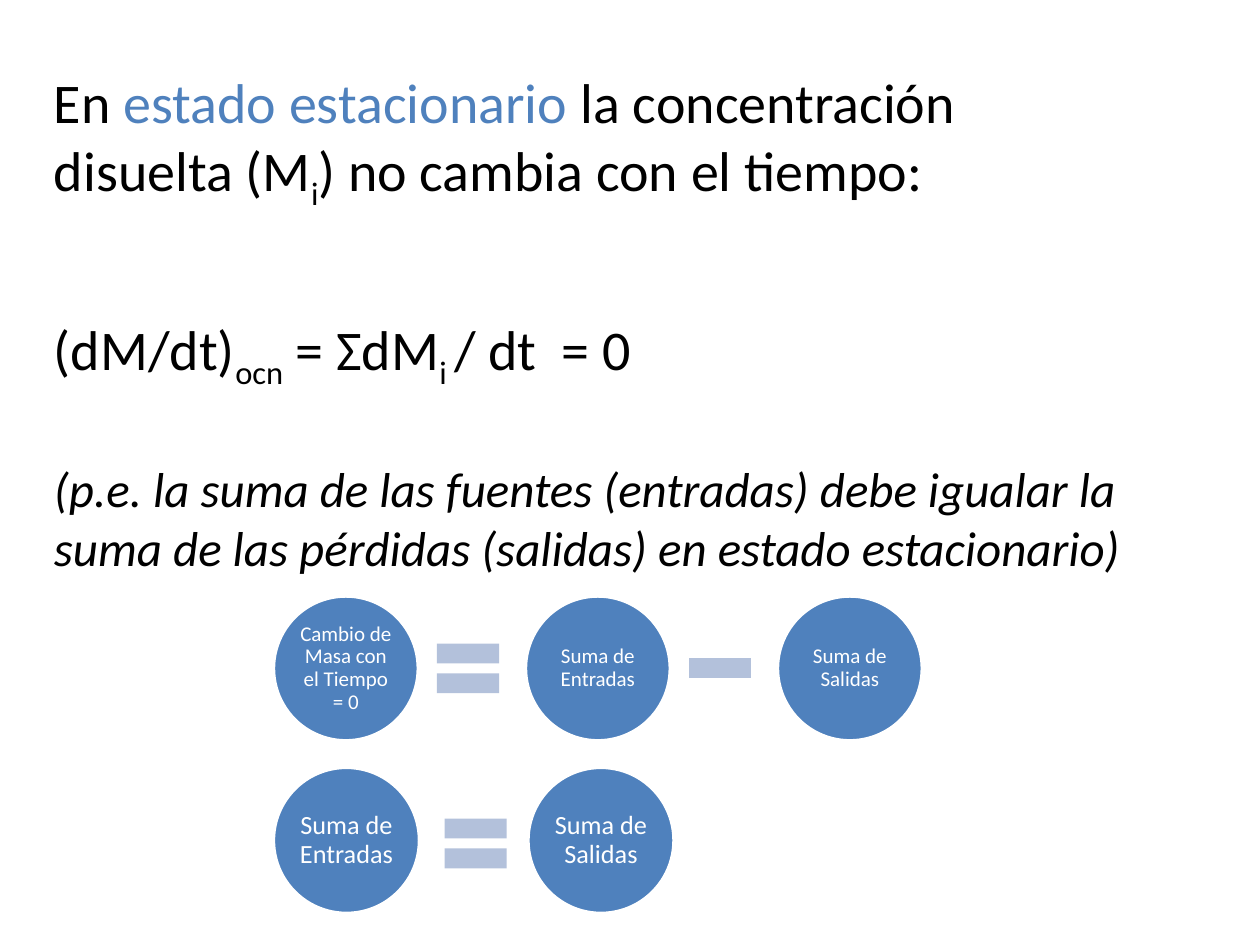
from pptx import Presentation
from pptx.dml.color import RGBColor
from pptx.enum.shapes import MSO_SHAPE as Shape
from pptx.enum.text import MSO_ANCHOR as Anchor, PP_ALIGN as Align
from pptx.util import Inches, Pt

BLACK = RGBColor(0x00, 0x00, 0x00)
WHITE = RGBColor(0xFF, 0xFF, 0xFF)
BLUE = RGBColor(0x4F, 0x81, 0xBD)
PALE_BLUE = RGBColor(0xB3, 0xC1, 0xDB)
FONT = "Calibri"
OPERATOR_SIZE = 0.67

# Each paragraph: space before, size, italic, runs of (text, colour, subscript)
STATEMENT = [
    (0, 32, False, [("En ", BLACK, False),
                    ("estado estacionario ", BLUE, False),
                    ("la concentración disuelta (M", BLACK, False),
                    ("i", BLACK, True),
                    (") no cambia con el tiempo:", BLACK, False)]),
    (58.6, 32, False, [("(dM/dt)", BLACK, False),
                       ("ocn", BLACK, True),
                       (" = ΣdM", BLACK, False),
                       ("i ", BLACK, True),
                       ("/ dt  = 0", BLACK, False)]),
    (39, 28, True, [("(p.e. la suma de las fuentes (entradas) debe igualar la "
                     "suma de las pérdidas (salidas) en estado estacionario)",
                     BLACK, False)]),
]


def set_format(target, values):
    for name, value in values.items():
        setattr(target, name, value)


def add_statement(slide, left, top, width, height):
    frame = slide.shapes.add_textbox(
        Inches(left), Inches(top), Inches(width), Inches(height)).text_frame
    frame.word_wrap = True
    for index, (before, size, italic, runs) in enumerate(STATEMENT):
        paragraph = frame.paragraphs[0] if index == 0 else frame.add_paragraph()
        paragraph.space_before = Pt(before)
        for text, colour, subscript in runs:
            run = paragraph.add_run()
            run.text = text
            set_format(run.font, {"name": FONT, "size": Pt(size), "italic": italic})
            run.font.color.rgb = colour
            if subscript:
                run.font._element.set("baseline", "-25000")


def add_solid(group, kind, left, top, size, colour):
    solid = group.shapes.add_shape(
        kind, Inches(left), Inches(top), Inches(size), Inches(size))
    solid.shadow.inherit = False
    solid.fill.solid()
    solid.fill.fore_color.rgb = colour
    solid.line.fill.background()
    return solid


def add_term(group, left, top, size, label, font_size):
    circle = add_solid(group, Shape.OVAL, left, top, size, BLUE)
    circle.line.color.rgb = WHITE
    circle.line.width = Pt(2)
    frame = circle.text_frame
    inset = Inches(0.02)
    set_format(frame, {"word_wrap": True, "vertical_anchor": Anchor.MIDDLE,
                       "margin_left": inset, "margin_right": inset,
                       "margin_top": inset, "margin_bottom": inset})
    paragraph = frame.paragraphs[0]
    set_format(paragraph, {"alignment": Align.CENTER, "line_spacing": 0.9})
    run = paragraph.add_run()
    run.text = label
    set_format(run.font, {"name": FONT, "size": Pt(font_size)})
    run.font.color.rgb = WHITE


def add_equation(slide, left, top, size, pitch, operator_offset, font_size,
                 terms, operators):
    """Row of circles at an even pitch, with an operator after each but the last."""
    group = slide.shapes.add_group_shape()
    dx, dy = operator_offset
    for index, label in enumerate(terms):
        add_term(group, left + index * pitch, top, size, label, font_size)
    for index, operator in enumerate(operators):
        add_solid(group, operator, left + index * pitch + dx, top + dy,
                  OPERATOR_SIZE, PALE_BLUE)


def main():
    prs = Presentation()
    prs.slide_width, prs.slide_height = Inches(10), Inches(7.5)
    slide = prs.slides.add_slide(prs.slide_layouts[6])

    # Steady-state statement
    add_statement(slide, 0.33, 0.49, 8.82, 4.01)

    # Mass balance: change = inputs - outputs
    add_equation(slide, 2.17, 4.73, 1.15, 2, (1.21, 0.24), 12,
                 ["Cambio de Masa con el Tiempo = 0", "Suma de Entradas",
                  "Suma de Salidas"],
                 [Shape.MATH_EQUAL, Shape.MATH_MINUS])

    # Steady state: inputs = outputs
    add_equation(slide, 2.17, 6.09, 1.16, 2.02, (1.27, 0.27), 15,
                 ["Suma de Entradas", "Suma de Salidas"],
                 [Shape.MATH_EQUAL])

    prs.save("out.pptx")


if __name__ == "__main__":
    main()
